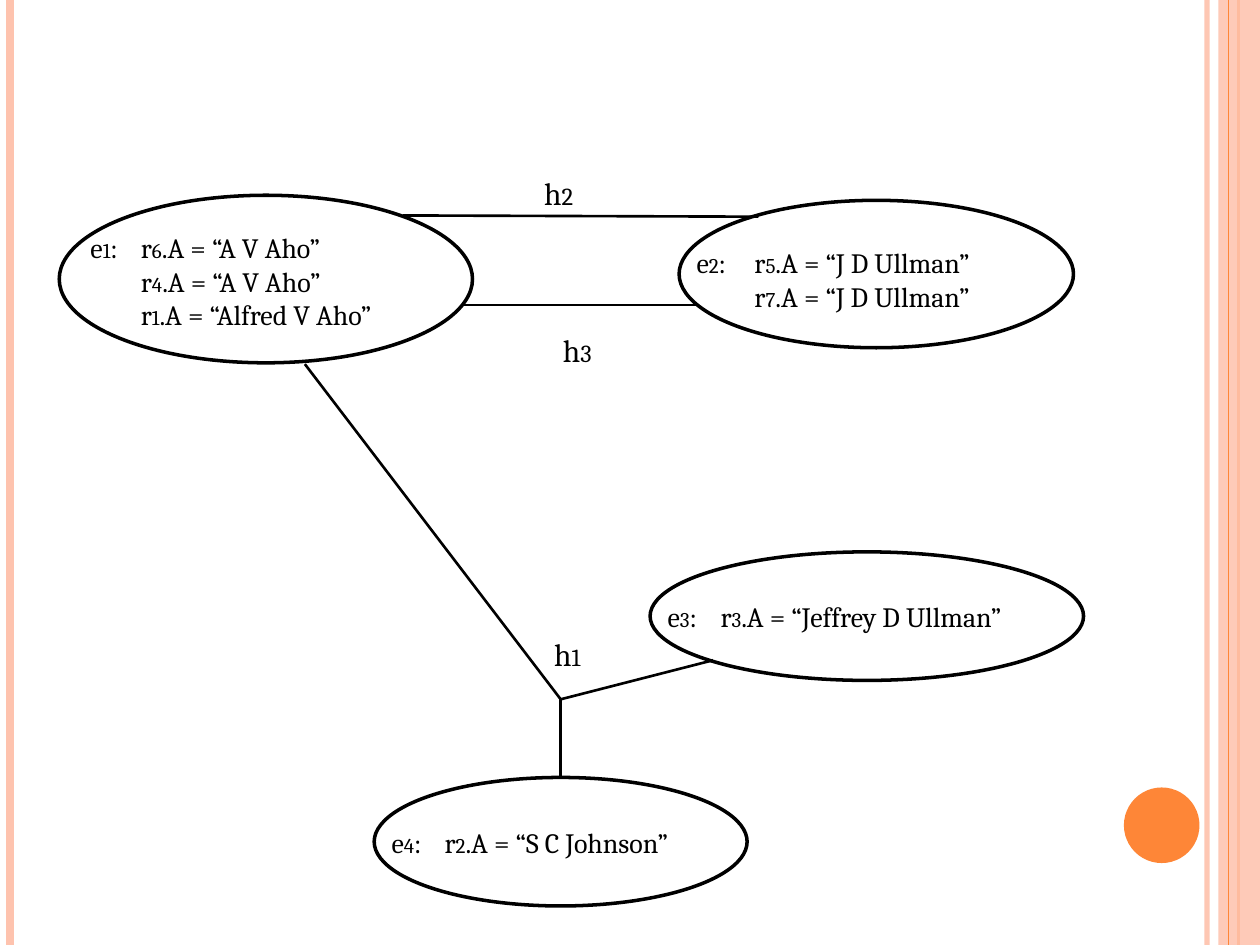
from itertools import groupby

from lxml import etree
from pptx import Presentation
from pptx.dml.color import RGBColor
from pptx.enum.shapes import MSO_CONNECTOR, MSO_SHAPE
from pptx.enum.text import MSO_AUTO_SIZE
from pptx.oxml.ns import qn
from pptx.util import Inches, Pt

STRAIGHT = MSO_CONNECTOR.STRAIGHT
OVAL, RECT = MSO_SHAPE.OVAL, MSO_SHAPE.RECTANGLE
AUTO_NONE = MSO_AUTO_SIZE.NONE
ORANGE, PEACH, BLACK = "FE8637", "FEC3AE", "000000"


def rgb(color):
    return RGBColor.from_string(color)


def add_text(tf, text, size=16, digit_size=12, color=BLACK, font="Cambria", tab=None):
    for i, line in enumerate(text.split("\n")):
        p = tf.paragraphs[0] if i == 0 else tf.add_paragraph()
        if tab:
            tabs = etree.SubElement(p._p.get_or_add_pPr(), qn("a:tabLst"))
            etree.SubElement(tabs, qn("a:tab"), pos=str(Inches(tab)), algn="l")
        for is_digit, chars in groupby(line, str.isdigit):
            r = p.add_run()
            r.text = "".join(chars)
            r.font.name = font
            r.font.size = Pt(digit_size if is_digit else size)
            r.font.color.rgb = rgb(color)


class Diagram:
    """Draws the elements of an entity graph on one slide."""

    def __init__(self, slide):
        self.s = slide

    def set_alpha(self, sp, percent):
        for clr in sp.element.iter(qn("a:srgbClr")):
            etree.SubElement(clr, qn("a:alpha"), val=str(percent * 1000))

    def line(self, x1, y1, x2, y2, color=BLACK, width=1.5):
        cn = self.s.shapes.add_connector(
            STRAIGHT, Inches(x1), Inches(y1), Inches(x2), Inches(y2))
        cn.line.color.rgb = rgb(color)
        cn.line.width = Pt(width)
        etree.SubElement(cn.element.spPr, qn("a:effectLst"))
        return cn

    def shape(self, kind, x, y, w, h, fill=None, outline=None):
        sp = self.s.shapes.add_shape(kind, Inches(x), Inches(y), Inches(w), Inches(h))
        sp.shadow.inherit = False
        if fill:
            sp.fill.solid()
            sp.fill.fore_color.rgb = rgb(fill)
        else:
            sp.fill.background()
        if outline:
            sp.line.color.rgb = rgb(outline)
            sp.line.width = Pt(2)
        else:
            sp.line.fill.background()
        return sp

    def text(self, x, y, w, h, text, **fmt):
        tf = self.s.shapes.add_textbox(Inches(x), Inches(y), Inches(w), Inches(h)).text_frame
        tf.word_wrap = True
        tf.auto_size = AUTO_NONE
        add_text(tf, text, **fmt)

    def entity(self, oval, box, text, tab=0.42):
        sp = self.shape(OVAL, *oval, outline=BLACK)
        self.text(*box, text, tab=tab)
        return sp

    def edge_label(self, x, y, text):
        self.text(x, y, 0.46, 0.4, text, size=18, digit_size=14)

    def side_bars(self):
        self.set_alpha(self.line(9.58, 0, 9.58, 7.5, PEACH, 3), 93)
        self.line(0.08, 0, 0.08, 7.5, PEACH, 4.5)
        self.line(9.83, 0, 9.83, 7.5, ORANGE, 1.5)
        self.set_alpha(self.shape(RECT, 9.67, 0, 0.33, 7.5, fill=PEACH), 87)
        self.line(9.75, 0, 9.75, 7.5, ORANGE, 0.75)
        self.shape(OVAL, 8.92, 6.25, 0.6, 0.6, fill=ORANGE)


def main():
    prs = Presentation()
    prs.slide_width, prs.slide_height = Inches(10), Inches(7.5)
    d = Diagram(prs.slides.add_slide(prs.slide_layouts[6]))
    d.side_bars()

    d.entity((0.47, 1.55, 3.28, 1.33), (0.62, 1.78, 2.97, 1.18),
             "e1:\tr6.A = “A V Aho”\n\tr4.A = “A V Aho”\n\tr1.A = “Alfred V Aho”", tab=0.4)
    d.entity((5.39, 1.59, 3.13, 1.17), (5.43, 1.9, 2.96, 0.91),
             "e2:\tr5.A = “J D Ullman”\n\tr7.A = “J D Ullman”", tab=0.46)
    d.entity((5.16, 4.38, 3.44, 1.02), (5.2, 4.71, 3.38, 0.37),
             "e3:\tr3.A = “Jeffrey D Ullman”")
    e4 = d.entity((2.97, 6.17, 2.96, 1.02), (3.01, 6.5, 2.87, 0.37),
                  "e4:\tr2.A = “S C Johnson”")

    d.line(3.2, 1.71, 6.02, 1.72)
    d.line(3.67, 2.42, 5.55, 2.42)
    hub = (4.45, 5.55)
    d.line(2.42, 2.89, *hub)
    d.line(5.66, 5.24, *hub)
    d.line(*hub, 4.45, 6.17).end_connect(e4, 0)

    d.edge_label(4.22, 1.33, "h2")
    d.edge_label(4.37, 2.58, "h3")
    d.edge_label(4.3, 4.99, "h1")
    prs.save("out.pptx")


if __name__ == "__main__":
    main()
